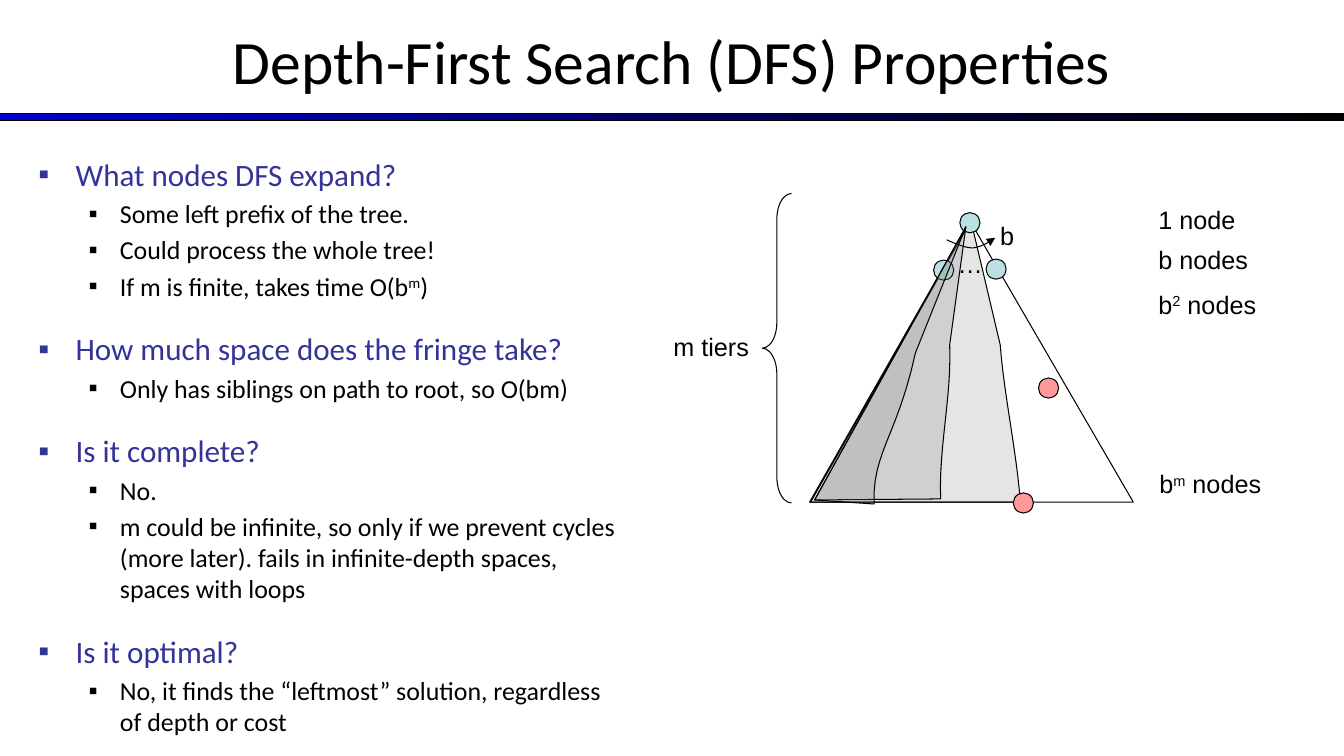
from dataclasses import dataclass
from typing import Optional

from lxml.etree import SubElement
from pptx import Presentation
from pptx.dml.color import RGBColor
from pptx.enum.shapes import MSO_SHAPE
from pptx.enum.text import MSO_ANCHOR, MSO_AUTO_SIZE, PP_ALIGN
from pptx.oxml.ns import qn
from pptx.util import Inches, Pt

COLORS = {
    "black": "000000",
    "bar": "0000CC",
    "heading": "333399",
    "node": "BBE0E3",
    "goal": "FF9999",
    "shade": "808080",
}
Point = tuple[float, float]
NODE_SIZE = 0.2
CURVE_STEPS = 12


@dataclass(frozen=True)
class Outline:
    start: Point
    steps: tuple[tuple[Point, ...], ...]
    closed: bool = True
    shaded: bool = True


@dataclass(frozen=True)
class Node:
    left: float
    top: float
    color: str


@dataclass(frozen=True)
class Label:
    left: float
    top: float
    width: float
    wording: tuple[str, ...]


@dataclass(frozen=True)
class Level:
    number: int
    margin: float
    hang: float
    size: float
    before: float
    color: str


@dataclass(frozen=True)
class Topic:
    question: str
    answers: tuple[tuple[str, ...], ...]


HEADING = Level(0, 0.37, 0.37, 22.2, 20.2, "heading")
ANSWER = Level(1, 0.81, 0.31, 18.5, 3.7, "black")

TOPICS = (
    Topic("What nodes DFS expand?", (
        ("Some left prefix of the tree.",),
        ("Could process the whole tree!",),
        ("If m is finite, takes time O(b", "m", ")"),
    )),
    Topic("How much space does the fringe take?", (
        ("Only has siblings on path to root, so O(bm)",),
    )),
    Topic("Is it complete?", (
        ("No.",),
        ("m could be infinite, so only if we prevent cycles (more later). "
         "fails in infinite-depth spaces, spaces with loops",),
    )),
    Topic("Is it optimal?", (
        ("No, it finds the “leftmost” solution, regardless of depth or cost",),
    )),
)

WIDE_SWEEP = Outline((8.04, 4.98), (
    ((10.12, 4.98),), ((10.08, 4.46), (9.96, 3.93), (9.92, 3.42)), ((9.63, 2.19),)))
TREE = Outline((8.03, 4.98), (((11.24, 4.98),), ((9.62, 2.19),)), shaded=False)
BRANCH_ARROW = Outline((9.39, 2.38), (
    ((9.48, 2.42), (9.57, 2.46), (9.65, 2.46)),
    ((9.73, 2.45), (9.8, 2.41), (9.87, 2.36))), closed=False, shaded=False)
MIDDLE_SWEEP = Outline((8.08, 4.96), (
    ((9.33, 4.95),), ((9.31, 4.44), (9.44, 3.93), (9.42, 3.42)), ((9.58, 2.25),)))
NARROW_SWEEP = Outline((8.08, 4.96), (
    ((8.67, 5.0),), ((8.65, 4.49), (8.9, 4.33), (9.08, 3.5)), ((9.58, 2.25),)))

NODES = (
    Node(9.52, 2.11, "node"),
    Node(9.26, 2.58, "node"),
    Node(9.78, 2.57, "node"),
    Node(10.05, 4.89, "goal"),
    Node(10.3, 3.75, "goal"),
)
LABELS = (
    Label(9.4, 2.41, 0.3, ("…",)),
    Label(9.82, 2.14, 0.33, ("b",)),
    Label(11.39, 1.98, 1.22, ("1 node",)),
    Label(11.39, 2.37, 1.22, ("b nodes",)),
    Label(11.39, 2.82, 1.22, ("b", "2", " nodes")),
    Label(11.4, 4.6, 1.6, ("b", "m", " nodes")),
    Label(6.58, 3.24, 1.38, ("m tiers",)),
)


def rgb(color: str) -> RGBColor:
    return RGBColor.from_string(COLORS[color])


def place(shape, left: float, top: float, width: float, height: float) -> None:
    bounds = {"left": left, "top": top, "width": width, "height": height}
    for name, value in bounds.items():
        setattr(shape, name, Inches(value))


def write(para, wording: tuple[str, ...], face: str, size: float, color: str) -> None:
    for index, text in enumerate(wording):
        span = para.add_run()
        span.text = text
        for name, value in {"name": face, "size": Pt(size)}.items():
            setattr(span.font, name, value)
        span.font.color.rgb = rgb(color)
        if index % 2:
            span._r.get_or_add_rPr().set("baseline", "30000")


def finish(shape, color: Optional[str] = None) -> None:
    shape.shadow.inherit = False
    if color:
        shape.fill.solid()
        shape.fill.fore_color.rgb = rgb(color)
    else:
        shape.fill.background()
    shape.line.color.rgb = rgb("black")
    shape.line.width = Pt(0.75)


def trace(outline: Outline) -> list[Point]:
    points = [outline.start]
    for step in outline.steps:
        if len(step) == 1:
            points.append(step[0])
            continue
        controls = (points[-1], *step)
        for tick in range(1, CURVE_STEPS + 1):
            t = tick / CURVE_STEPS
            weights = ((1 - t) ** 3, 3 * t * (1 - t) ** 2, 3 * t * t * (1 - t), t ** 3)
            x, y = (sum(w * c[axis] for w, c in zip(weights, controls)) for axis in (0, 1))
            points.append((x, y))
    return points


def draw_outline(page, outline: Outline):
    first, *rest = [(Inches(x), Inches(y)) for x, y in trace(outline)]
    builder = page.shapes.build_freeform(*first)
    builder.add_line_segments(rest, close=outline.closed)
    shape = builder.convert_to_shape()
    finish(shape, "shade" if outline.shaded else None)
    if outline.shaded:
        color = shape._element.spPr.find(qn("a:solidFill")).find(qn("a:srgbClr"))
        SubElement(color, qn("a:alpha")).set("val", "20000")
    return shape


def draw_node(page, node: Node) -> None:
    bounds = map(Inches, (node.left, node.top, NODE_SIZE, NODE_SIZE))
    finish(page.shapes.add_shape(MSO_SHAPE.OVAL, *bounds), node.color)


def draw_label(page, label: Label) -> None:
    box = page.shapes.add_textbox(*map(Inches, (label.left, label.top, label.width, 0.4)))
    box.text_frame.word_wrap = True
    write(box.text_frame.paragraphs[0], label.wording, "Arial", 18, "black")


def add_item(frame, level: Level, wording: tuple[str, ...], first: bool) -> None:
    para = frame.paragraphs[0] if first else frame.add_paragraph()
    para.level = level.number
    props = para._p.get_or_add_pPr()
    props.set("marL", str(Inches(level.margin)))
    props.set("indent", str(-Inches(level.hang)))
    tint = SubElement(props, qn("a:buClr"))
    SubElement(tint, qn("a:srgbClr")).set("val", COLORS[level.color])
    SubElement(props, qn("a:buFont")).set("typeface", "Arial")
    SubElement(props, qn("a:buChar")).set("char", "▪")
    para.space_before = Pt(0 if first else level.before)
    write(para, wording, "Calibri", level.size, level.color)


def fill_text(page) -> None:
    title, body = page.placeholders
    place(title, 0, -0.03, 13.33, 1.25)
    title.text_frame.vertical_anchor = MSO_ANCHOR.MIDDLE
    para = title.text_frame.paragraphs[0]
    para.alignment = PP_ALIGN.CENTER
    write(para, ("Depth-First Search (DFS) Properties",), "Calibri", 44, "black")
    place(body, 0.28, 1.49, 5.97, 5.17)
    frame = body.text_frame
    frame.auto_size = MSO_AUTO_SIZE.NONE
    for index, topic in enumerate(TOPICS):
        add_item(frame, HEADING, (topic.question,), index == 0)
        for answer in topic.answers:
            add_item(frame, ANSWER, answer, False)


def draw_bar(page) -> None:
    bar = page.shapes.add_shape(MSO_SHAPE.RECTANGLE, *map(Inches, (0, 1.13, 13.33, 0.07)))
    finish(bar)
    bar.fill.gradient()
    bar.fill.gradient_angle = 0
    for stop, color in zip(bar.fill.gradient_stops, ("bar", "black")):
        stop.color.rgb = rgb(color)


def draw_tree(page) -> None:
    draw_outline(page, WIDE_SWEEP)
    draw_outline(page, TREE)
    for node in NODES:
        draw_node(page, node)
    arrow = draw_outline(page, BRANCH_ARROW)
    line = arrow._element.spPr.find(qn("a:ln"))
    SubElement(line, qn("a:tailEnd")).set("type", "triangle")
    brace = page.shapes.add_shape(MSO_SHAPE.LEFT_BRACE, *map(Inches, (7.56, 1.92, 0.29, 3.07)))
    brace.adjustments[0] = 0.884
    finish(brace)
    for label in LABELS:
        draw_label(page, label)
    for sweep in (MIDDLE_SWEEP, NARROW_SWEEP):
        draw_outline(page, sweep)


def main() -> None:
    deck = Presentation()
    deck.slide_width, deck.slide_height = Inches(13.33), Inches(7.5)
    page = deck.slides.add_slide(deck.slide_layouts[1])
    fill_text(page)
    draw_bar(page)
    draw_tree(page)
    deck.save("out.pptx")


if __name__ == "__main__":
    main()
